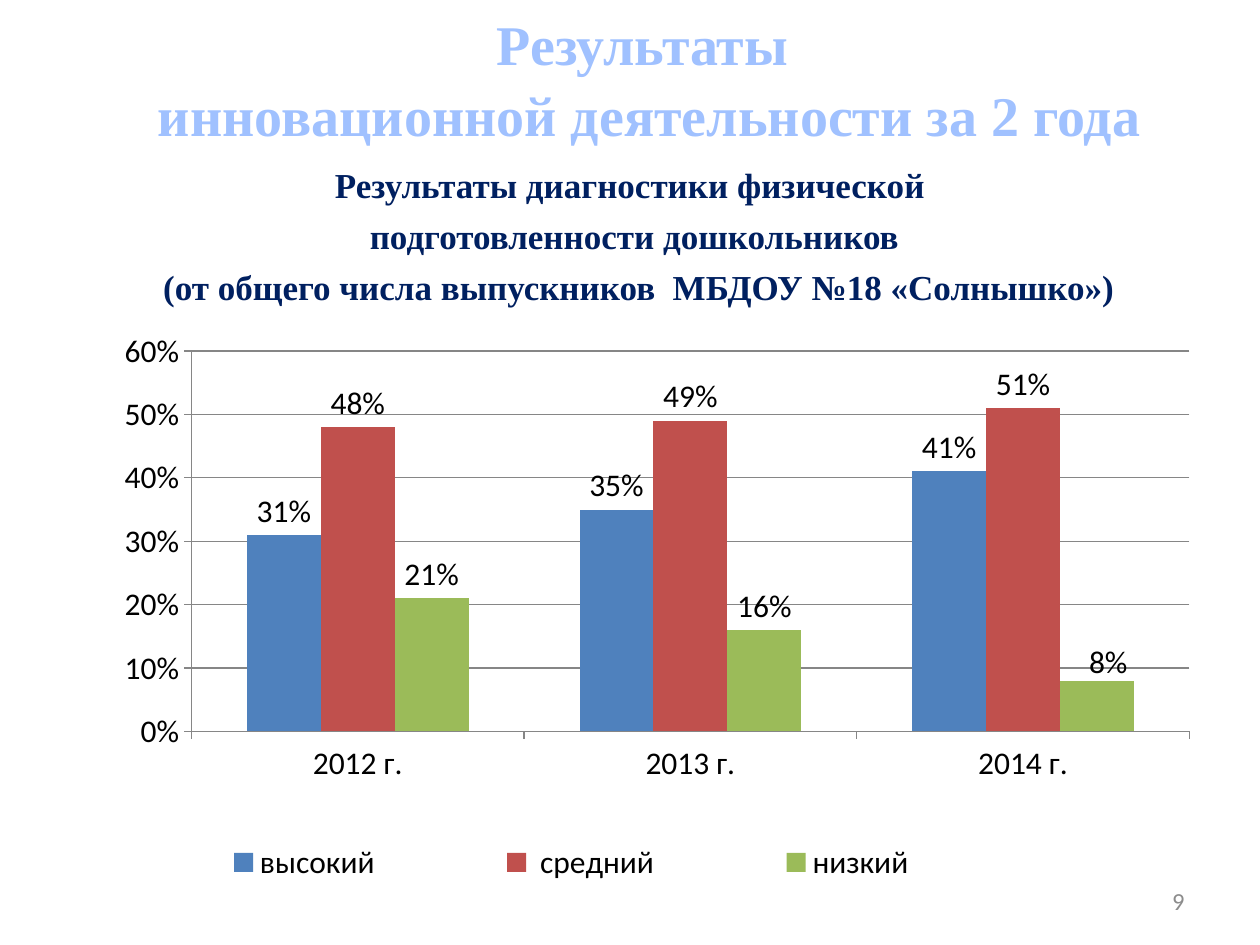
import lxml.etree
import pptx
import pptx.chart.data
import pptx.dml.color
import pptx.enum.chart
import pptx.enum.text
import pptx.oxml.ns
import pptx.util

RGB = pptx.dml.color.RGBColor
Pt = pptx.util.Pt
ALIGN = pptx.enum.text.PP_ALIGN
ANCHOR = pptx.enum.text.MSO_ANCHOR
qn = pptx.oxml.ns.qn

LIGHT_BLUE = RGB(0xA0, 0xC1, 0xFF)
NAVY = RGB(0x00, 0x20, 0x60)
GRAY = RGB(0x8C, 0x8C, 0x8C)
LINE_GRAY = RGB(0x86, 0x86, 0x86)
BLACK = RGB(0, 0, 0)
BLUE = RGB(0x4F, 0x81, 0xBD)
RED = RGB(0xC0, 0x50, 0x4D)
GREEN = RGB(0x9B, 0xBB, 0x59)
SERIF = "Times New Roman"
SANS = "Calibri"

YEARS = ["2012 г.", "2013 г.", "2014 г."]
LEVELS = [
    ("высокий", (0.31, 0.35, 0.41), BLUE),
    (" средний", (0.48, 0.49, 0.51), RED),
    ("низкий", (0.21, 0.16, 0.08), GREEN),
]


def inches(box):
    return [pptx.util.Inches(v) for v in box]


def format_font(font, size, name, color, bold=False):
    font.size, font.name, font.bold = Pt(size), name, bold
    font.color.rgb = color


def write(sp, lines, size, name, color, bold=False, align=ALIGN.CENTER,
          anchor=ANCHOR.TOP, gap=0, spacing=1.0):
    tf = sp.text_frame
    tf.word_wrap = True
    tf.auto_size = pptx.enum.text.MSO_AUTO_SIZE.NONE
    tf.vertical_anchor = anchor
    for i, line in enumerate(lines):
        p = tf.add_paragraph() if i else tf.paragraphs[0]
        p.text = line
        p.alignment = align
        p.line_spacing = spacing
        p.space_before = Pt(gap if i else 0)
        for r in p.runs:
            format_font(r.font, size, name, color, bold)


def manual_layout(parent, index, target=None, edge=True, **shares):
    for old in parent.findall(qn("c:layout")):
        parent.remove(old)
    layout = lxml.etree.Element(qn("c:layout"))
    manual = lxml.etree.SubElement(layout, qn("c:manualLayout"))
    values = {}
    if target:
        values["layoutTarget"] = target
    if edge:
        values.update(xMode="edge", yMode="edge")
    values.update(shares)
    for tag, value in values.items():
        lxml.etree.SubElement(manual, qn("c:" + tag)).set("val", str(value))
    parent.insert(index, layout)


def add_title(slide, box):
    sp = slide.shapes.title
    sp.left, sp.top, sp.width, sp.height = inches(box)
    write(sp, ["Результаты \vинновационной деятельности за 2 года"],
          32, SERIF, LIGHT_BLUE, bold=True, spacing=1.05)


def add_subtitle(slide, box):
    write(slide.shapes.add_textbox(*inches(box)), [
        "Результаты диагностики физической ",
        "подготовленности дошкольников",
        " (от общего числа выпускников  МБДОУ №18 «Солнышко»)",
    ], 20, SERIF, NAVY, bold=True, gap=5)


def add_page_number(slide, box):
    write(slide.shapes.add_textbox(*inches(box)), ["9"], 14, SANS, GRAY,
          align=ALIGN.RIGHT, anchor=ANCHOR.MIDDLE)


def format_axes(chart):
    for axis in (chart.category_axis, chart.value_axis):
        axis.major_tick_mark = pptx.enum.chart.XL_TICK_MARK.OUTSIDE
        axis.minor_tick_mark = pptx.enum.chart.XL_TICK_MARK.NONE
        axis.format.line.color.rgb = LINE_GRAY
    axis = chart.value_axis
    axis.minimum_scale, axis.maximum_scale, axis.major_unit = 0, 0.6, 0.1
    axis.tick_labels.number_format = "0%"
    axis.tick_labels.number_format_is_linked = False
    axis.major_gridlines.format.line.color.rgb = LINE_GRAY


def format_series(plot):
    outside = pptx.enum.chart.XL_LABEL_POSITION.OUTSIDE_END
    plot.gap_width, plot.overlap, plot.vary_by_categories = 150, 0, False
    for series, (_, _, color) in zip(plot.series, LEVELS):
        series.invert_if_negative = False
        series.format.fill.solid()
        series.format.fill.fore_color.rgb = color
        labels = series.data_labels
        labels.show_value = True
        labels.number_format = "0%"
        labels.number_format_is_linked = False
        labels.position = outside
        format_font(labels.font, 18, SANS, BLACK)
    label = series.points[len(YEARS) - 1].data_label
    label.position = outside
    format_font(label.font, 18, SANS, BLACK)
    manual_layout(labels._element.find(qn("c:dLbl")), 1, edge=False, x=0.01, y=0.01)


def add_results_chart(slide, box):
    data = pptx.chart.data.CategoryChartData(number_format="0%")
    data.categories = YEARS
    for name, values, _ in LEVELS:
        data.add_series(name, values)
    kind = pptx.enum.chart.XL_CHART_TYPE.COLUMN_CLUSTERED
    chart = slide.shapes.add_chart(kind, *inches(box), data).chart
    chart.has_title = False
    format_font(chart.font, 18, SANS, BLACK)
    format_axes(chart)
    format_series(chart.plots[0])
    chart.has_legend = True
    legend = chart.legend
    legend.position = pptx.enum.chart.XL_LEGEND_POSITION.RIGHT
    legend.include_in_layout = False
    format_font(legend.font, 18, SANS, BLACK)
    manual_layout(legend._element, 1, x=0.03, y=0.86, w=0.81, h=0.1)
    plot_area = chart._chartSpace.find(".//" + qn("c:plotArea"))
    manual_layout(plot_area, 0, target="inner", x=0.1, y=0.05, w=0.88, h=0.64)


def main():
    prs = pptx.Presentation()
    prs.slide_width, prs.slide_height = inches((10, 7.5))
    slide = prs.slides.add_slide(prs.slide_layouts[5])
    add_results_chart(slide, (0.62, 2.55, 9, 4.72))
    add_subtitle(slide, (0.7, 1.25, 8.67, 1.25))
    add_title(slide, (0.7, 0, 8.91, 1.18))
    add_page_number(slide, (7.17, 6.95, 2.33, 0.4))
    prs.save("out.pptx")


if __name__ == "__main__":
    main()
